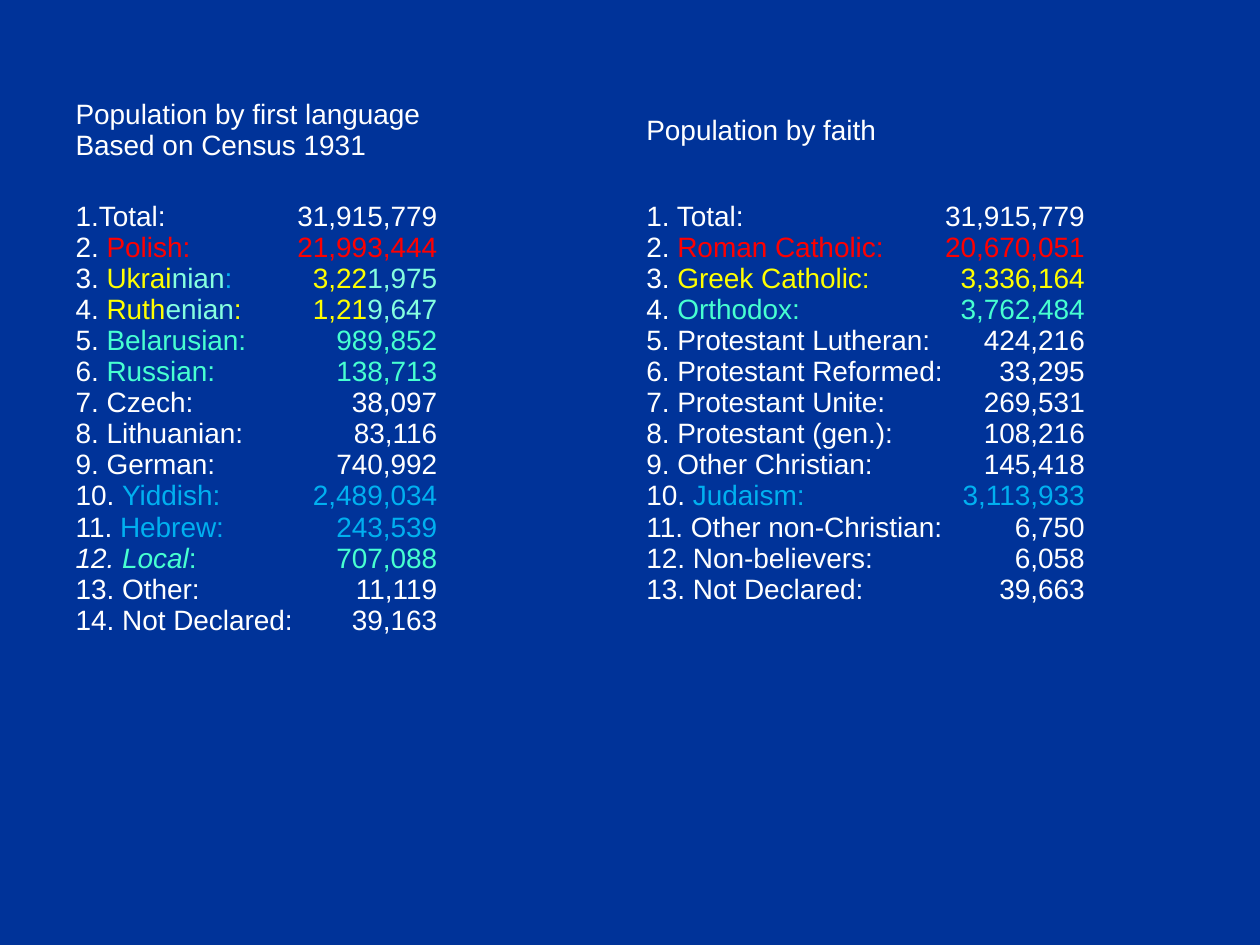
"""Build a slide listing the 1931 census population by first language and by faith."""
from lxml.etree import SubElement
from pptx import Presentation
from pptx.dml.color import RGBColor
from pptx.enum.text import MSO_ANCHOR
from pptx.oxml.ns import qn
from pptx.util import Inches, Pt

COLORS = {"background": "003399", "white": "FFFFFF", "red": "FF0000", "yellow": "FFFF00",
          "pale": "85FFE0", "aqua": "47FFD1", "blue": "00B0F0"}
NO_GRID_STYLE = "{2D5ABB26-0587-4C30-8999-92F81FD0307C}"

languages = [
    [("Total:\t31,915,779", "white")],
    [(" ", "white"), ("Polish:\t21,993,444", "red")],
    [(" ", "white"), ("Ukrai", "yellow"), ("nian", "pale"), (":", "blue"),
     ("\t3,22", "yellow"), ("1,975", "pale")],
    [(" ", "white"), ("Ruth", "yellow"), ("enian", "pale"),
     (":\t1,21", "yellow"), ("9,647", "pale")],
    [(" ", "white"), ("Belarusian:\t989,852", "aqua")],
    [(" ", "white"), ("Russian:\t138,713", "aqua")],
    [(" Czech:\t38,097", "white")],
    [(" Lithuanian:\t83,116", "white")],
    [(" German:\t740,992", "white")],
    [(" ", "white"), ("Yiddish:\t2,489,034", "blue")],
    [(" ", "white"), ("Hebrew:\t243,539", "blue")],
    [(" ", "white", True), ("Local", "aqua", True), (":\t707,088", "aqua")],
    [(" Other:\t11,119", "white")],
    [(" Not Declared:\t39,163", "white")],
]
faiths = [
    [(" Total:\t31,915,779", "white")],
    [(" ", "white"), ("Roman Catholic:\t20,670,051", "red")],
    [(" ", "white"), ("Greek Catholic:\t3,336,164", "yellow")],
    [(" ", "white"), ("Orthodox:\t3,762,484", "aqua")],
    [(" Protestant Lutheran:\t424,216", "white")],
    [(" Protestant Reformed:\t33,295", "white")],
    [(" Protestant Unite:\t269,531", "white")],
    [(" Protestant (gen.):\t108,216", "white")],
    [(" Other Christian:\t145,418", "white")],
    [(" ", "white"), ("Judaism:\t3,113,933", "blue")],
    [(" Other non-Christian:\t6,750", "white")],
    [(" Non-believers:\t6,058", "white")],
    [(" Not Declared:\t39,663", "white")],
]
columns = [
    ("Population by first language\nBased on Census 1931", languages, 4.53, 2.87),
    ("Population by faith", faiths, 4.37, 3.48),
]


def style_run(run, color, italic=False):
    run.font.name = "Arial"
    run.font.size = Pt(16)
    run.font.bold = False
    run.font.italic = italic
    run.font.color.rgb = RGBColor.from_string(COLORS[color])


def number_paragraph(paragraph, tab_position):
    properties = paragraph._p.get_or_add_pPr()
    properties.set("marL", "0")
    properties.set("indent", "0")
    SubElement(properties, qn("a:buFont"), typeface="+mj-lt")
    SubElement(properties, qn("a:buAutoNum"), type="arabicPeriod")
    tabs = SubElement(properties, qn("a:tabLst"))
    SubElement(tabs, qn("a:tab"), pos=str(Inches(tab_position)), algn="r")


prs = Presentation()
prs.slide_width, prs.slide_height = Inches(10), Inches(7.5)
slide = prs.slides.add_slide(prs.slide_layouts[6])
slide.background.fill.solid()
slide.background.fill.fore_color.rgb = RGBColor.from_string(COLORS["background"])

census = slide.shapes.add_table(2, 2, Inches(0.55), Inches(0.76), Inches(8.9), Inches(4.32)).table
census.first_row = census.horz_banding = False
census._tbl.tblPr.find(qn("a:tableStyleId")).text = NO_GRID_STYLE
census.rows[0].height = Inches(0.55)
census.rows[1].height = Inches(3.77)

for index, (heading, entries, width, tab_position) in enumerate(columns):
    census.columns[index].width = Inches(width)
    heading_cell, list_cell = census.cell(0, index), census.cell(1, index)
    for cell in (heading_cell, list_cell):
        cell.fill.background()
        cell.margin_left = cell.margin_right = Inches(0.05)
        cell.margin_top = cell.margin_bottom = Inches(0.03)
    heading_cell.vertical_anchor = MSO_ANCHOR.MIDDLE
    heading_cell.text_frame.text = heading
    for paragraph in heading_cell.text_frame.paragraphs:
        style_run(paragraph.runs[0], "white")

    list_cell.margin_top = Inches(0.28)
    list_cell.vertical_anchor = MSO_ANCHOR.TOP
    for number, segments in enumerate(entries):
        frame = list_cell.text_frame
        paragraph = frame.add_paragraph() if number else frame.paragraphs[0]
        number_paragraph(paragraph, tab_position)
        for text, *style in segments:
            run = paragraph.add_run()
            run.text = text
            style_run(run, *style)

prs.save("out.pptx")
